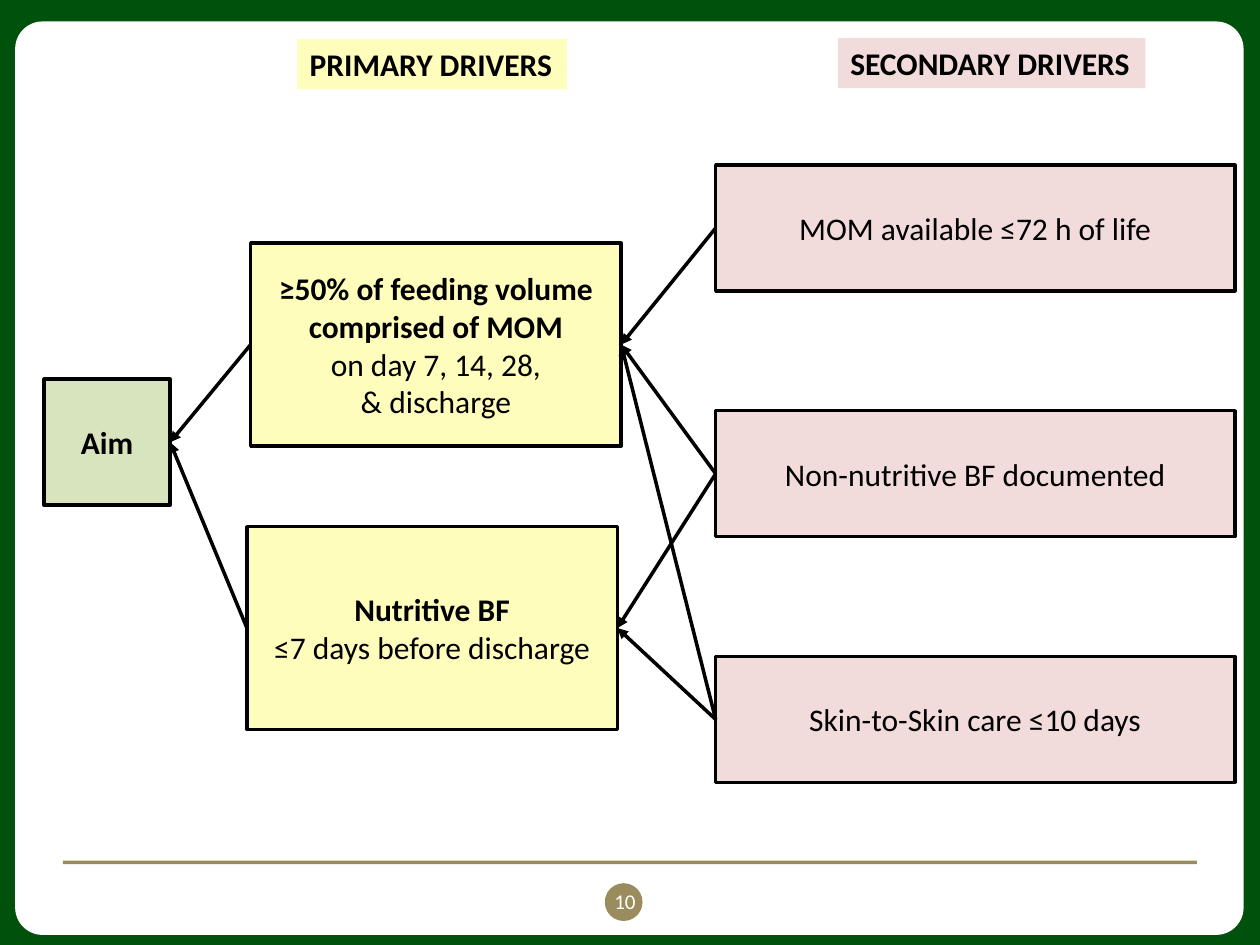
"""Build a driver diagram slide linking an aim to its primary and secondary drivers."""
from dataclasses import dataclass

from lxml.etree import SubElement
from pptx import Presentation
from pptx.dml.color import RGBColor
from pptx.enum.shapes import MSO_CONNECTOR as Connector, MSO_SHAPE as Shape
from pptx.enum.text import MSO_ANCHOR as Anchor, MSO_AUTO_SIZE as AutoSize, PP_ALIGN as Align
from pptx.oxml.ns import qn
from pptx.util import Inches, Pt

LEFT, RIGHT = 1, 3


@dataclass(frozen=True)
class Theme:
    frame: str = "00510B"
    paper: str = "FFFFFF"
    accent: str = "9A8C5C"
    aim: str = "D7E4BD"
    primary: str = "FFFDBB"
    secondary: str = "F2DCDB"
    ink: str = "000000"
    font: str = "Calibri"
    body: int = 18
    number: int = 12
    line: int = 2


THEME = Theme()


def color(value):
    return RGBColor.from_string(value)


def add_panel(slide, kind, box, fill, outlined=False):
    shape = slide.shapes.add_shape(kind, *map(Inches, box))
    shape.shadow.inherit = False
    shape.fill.solid()
    shape.fill.fore_color.rgb = color(fill)
    if outlined:
        shape.line.color.rgb = color(THEME.ink)
        shape.line.width = Pt(THEME.line)
    else:
        shape.line.fill.background()
    return shape


def write(shape, lines, align=Align.CENTER, size=THEME.body, ink=THEME.ink):
    """Fill a shape with (text, bold) lines, one paragraph each."""
    frame = shape.text_frame
    for index, (text, bold) in enumerate(lines):
        paragraph = frame.add_paragraph() if index else frame.paragraphs[0]
        paragraph.alignment = align
        run = paragraph.add_run()
        run.text = text
        run.font.name = THEME.font
        run.font.size = Pt(size)
        run.font.bold = bold
        run.font.color.rgb = color(ink)


def add_box(slide, box, fill, *lines):
    shape = add_panel(slide, Shape.RECTANGLE, box, fill, outlined=True)
    shape.text_frame.word_wrap = True
    shape.text_frame.vertical_anchor = Anchor.MIDDLE
    write(shape, lines)
    return shape


def add_heading(slide, box, fill, text):
    shape = add_panel(slide, Shape.RECTANGLE, box, fill)
    frame = shape.text_frame
    frame.word_wrap = False
    frame.auto_size = AutoSize.SHAPE_TO_FIT_TEXT
    frame.vertical_anchor = Anchor.TOP
    write(shape, [(text, True)], Align.LEFT)


def add_arrow(slide, source, target):
    arrow = slide.shapes.add_connector(Connector.STRAIGHT, 0, 0, 0, 0)
    arrow.begin_connect(source, LEFT)
    arrow.end_connect(target, RIGHT)
    arrow.line.color.rgb = color(THEME.ink)
    arrow.line.width = Pt(THEME.line)
    properties = arrow._element.spPr
    SubElement(properties.find(qn("a:ln")), qn("a:tailEnd"), type="triangle")
    SubElement(properties, qn("a:effectLst"))


def add_background(slide):
    slide.background.fill.solid()
    slide.background.fill.fore_color.rgb = color(THEME.frame)
    paper = add_panel(slide, Shape.ROUNDED_RECTANGLE, (0.12, 0.17, 9.75, 7.25), THEME.paper)
    paper.adjustments[0] = 0.03
    add_panel(slide, Shape.OVAL, (4.8, 7.01, 0.3, 0.3), THEME.accent)
    add_panel(slide, Shape.RECTANGLE, (0.5, 6.83, 9, 0.03), THEME.accent)
    number = slide.shapes.add_textbox(*map(Inches, (4.75, 7, 0.42, 0.35)))
    number.text_frame.word_wrap = True
    write(number, [("10", False)], size=THEME.number, ink=THEME.paper)


def main():
    presentation = Presentation()
    presentation.slide_width, presentation.slide_height = Inches(10), Inches(7.5)
    slide = presentation.slides.add_slide(presentation.slide_layouts[6])
    add_background(slide)

    aim = add_box(slide, (0.35, 3.01, 1, 1), THEME.aim, ("Aim", True))
    volume = add_box(
        slide, (1.99, 1.93, 2.94, 1.61), THEME.primary,
        ("≥50% of feeding volume comprised of MOM", True),
        ("on day 7, 14, 28,", False),
        ("& discharge", False),
    )
    nutritive = add_box(
        slide, (1.96, 4.18, 2.94, 1.61), THEME.primary,
        ("Nutritive BF", True),
        ("≤7 days before discharge", False),
    )
    secondary = (
        "MOM available ≤72 h of life",
        "Non-nutritive BF documented",
        "Skin-to-Skin care ≤10 days",
    )
    available, documented, skin = [
        add_box(slide, (5.68, 1.31 + 1.95 * row, 4.12, 1), THEME.secondary, (text, False))
        for row, text in enumerate(secondary)
    ]
    add_heading(slide, (2.36, 0.31, 2.14, 0.4), THEME.primary, "PRIMARY DRIVERS")
    add_heading(slide, (6.65, 0.3, 2.44, 0.4), THEME.secondary, "SECONDARY DRIVERS")

    links = (
        (volume, (available, documented, skin)),
        (nutritive, (documented, skin)),
        (aim, (volume, nutritive)),
    )
    for target, sources in links:
        for source in sources:
            add_arrow(slide, source, target)
    presentation.save("out.pptx")


if __name__ == "__main__":
    main()
